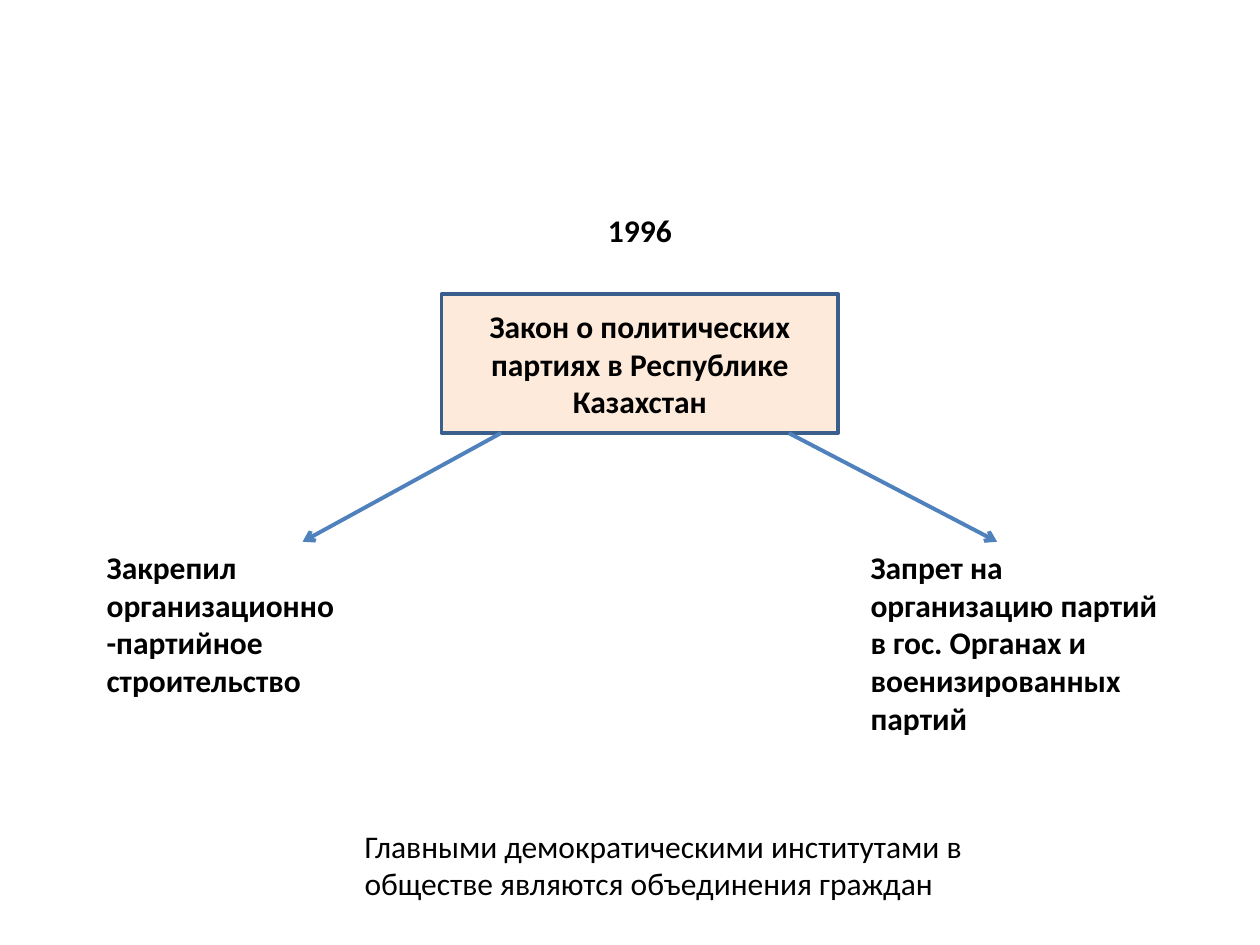
from pptx import Presentation
from pptx.dml.color import RGBColor as RGB
from pptx.enum.shapes import MSO_CONNECTOR as LINE, MSO_SHAPE as SHAPE
from pptx.enum.text import MSO_ANCHOR as ANCHOR, MSO_AUTO_SIZE as FIT, PP_ALIGN as ALIGN
from pptx.oxml.ns import qn
from pptx.util import Cm, Pt
from lxml.etree import SubElement as add_sub

COLORS = {"text": "000000", "fill": "FDEADA", "edge": "3A5F8C", "arrow": "4F81BD"}


def color(name):
    return RGB.from_string(COLORS[name])


def write(shape, text, align, bold=True):
    frame = shape.text_frame
    frame.word_wrap = True
    para = frame.paragraphs[0]
    para.alignment = align
    run = para.add_run()
    run.text = text
    style = {"name": "Calibri", "size": Pt(18), "bold": bold}
    for key, value in style.items():
        setattr(run.font, key, value)
    run.font.color.rgb = color("text")


deck = Presentation()
deck.slide_width, deck.slide_height = Cm(25.4), Cm(19.05)
slide = deck.slides.add_slide(deck.slide_layouts[6])
shapes = slide.shapes

# Law box
law = shapes.add_shape(SHAPE.RECTANGLE, Cm(8.9), Cm(5.93), Cm(8), Cm(2.8))
law.shadow.inherit = False
law.fill.solid()
law.fill.fore_color.rgb = color("fill")
law.line.color.rgb = color("edge")
law.line.width = Pt(2)
law.text_frame.vertical_anchor = ANCHOR.MIDDLE
write(law, "Закон о политических партиях в Республике Казахстан", ALIGN.CENTER)

# Arrows from the law to its two results
for start, end in [(10.1, 6.1), (15.9, 20.1)]:
    arrow = shapes.add_connector(LINE.STRAIGHT, Cm(start), Cm(8.73), Cm(end), Cm(10.92))
    arrow.line.color.rgb = color("arrow")
    arrow.line.width = Pt(2.25)
    add_sub(arrow.line._get_or_add_ln(), qn("a:tailEnd"), type="arrow")
    add_sub(arrow._element.spPr, qn("a:effectLst"))

# Year, results and closing note: left, top, width, height, text, align, bold
notes = [
    (1.9, 10.92, 5.2, 3.33, "Закрепил организационно-партийное строительство", ALIGN.LEFT, True),
    (17.3, 10.92, 6.4, 4.1,
     "Запрет на организацию партий в гос. Органах и военизированных партий", ALIGN.LEFT, True),
    (10, 4.12, 5.8, 1.03, "1996", ALIGN.CENTER, True),
    (7.1, 16.54, 13.4, 1.8,
     "Главными демократическими институтами в обществе являются объединения граждан",
     ALIGN.LEFT, False),
]
for left, top, width, height, text, align, bold in notes:
    box = shapes.add_textbox(Cm(left), Cm(top), Cm(width), Cm(height))
    box.text_frame.auto_size = FIT.SHAPE_TO_FIT_TEXT
    write(box, text, align, bold)

deck.save("out.pptx")
